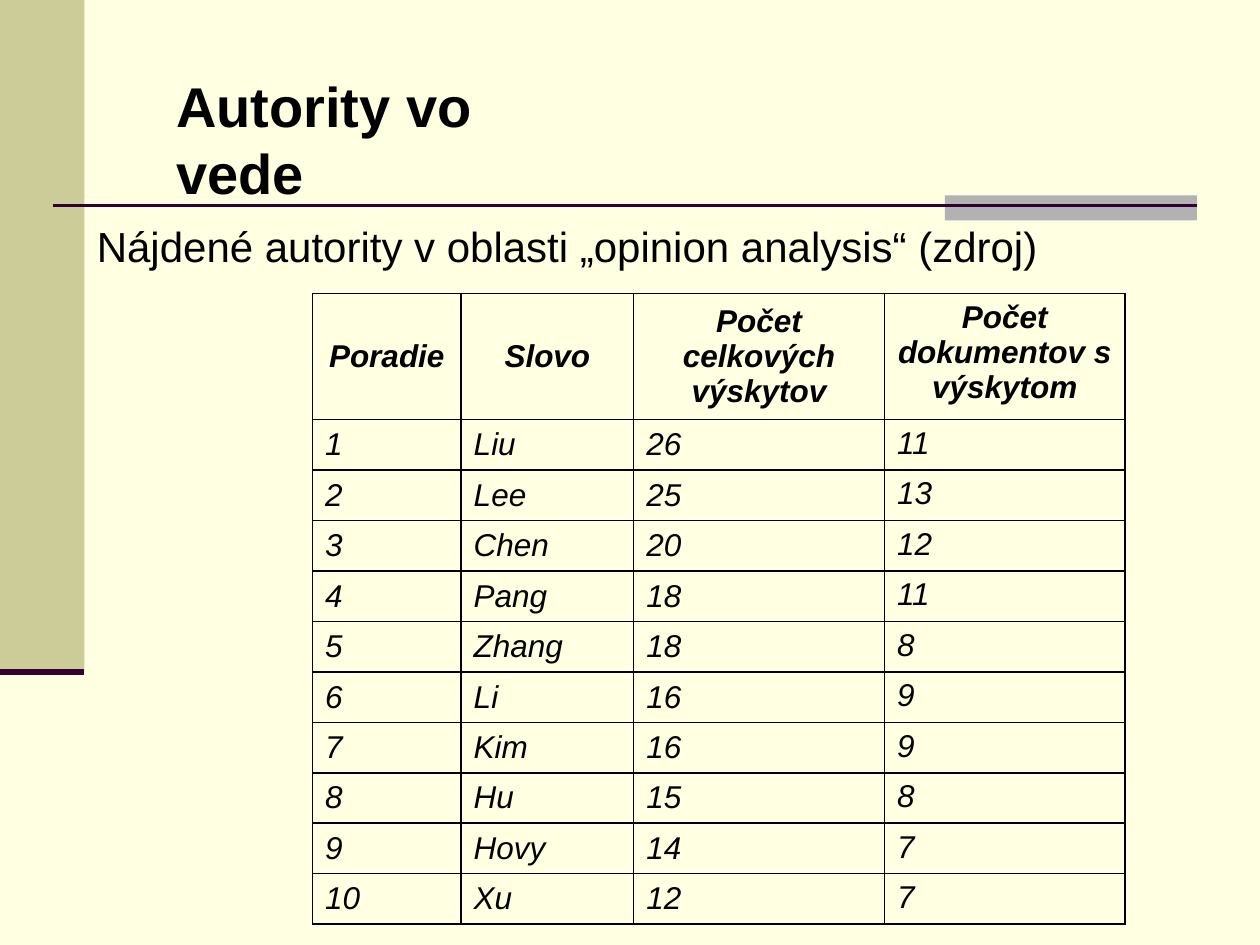
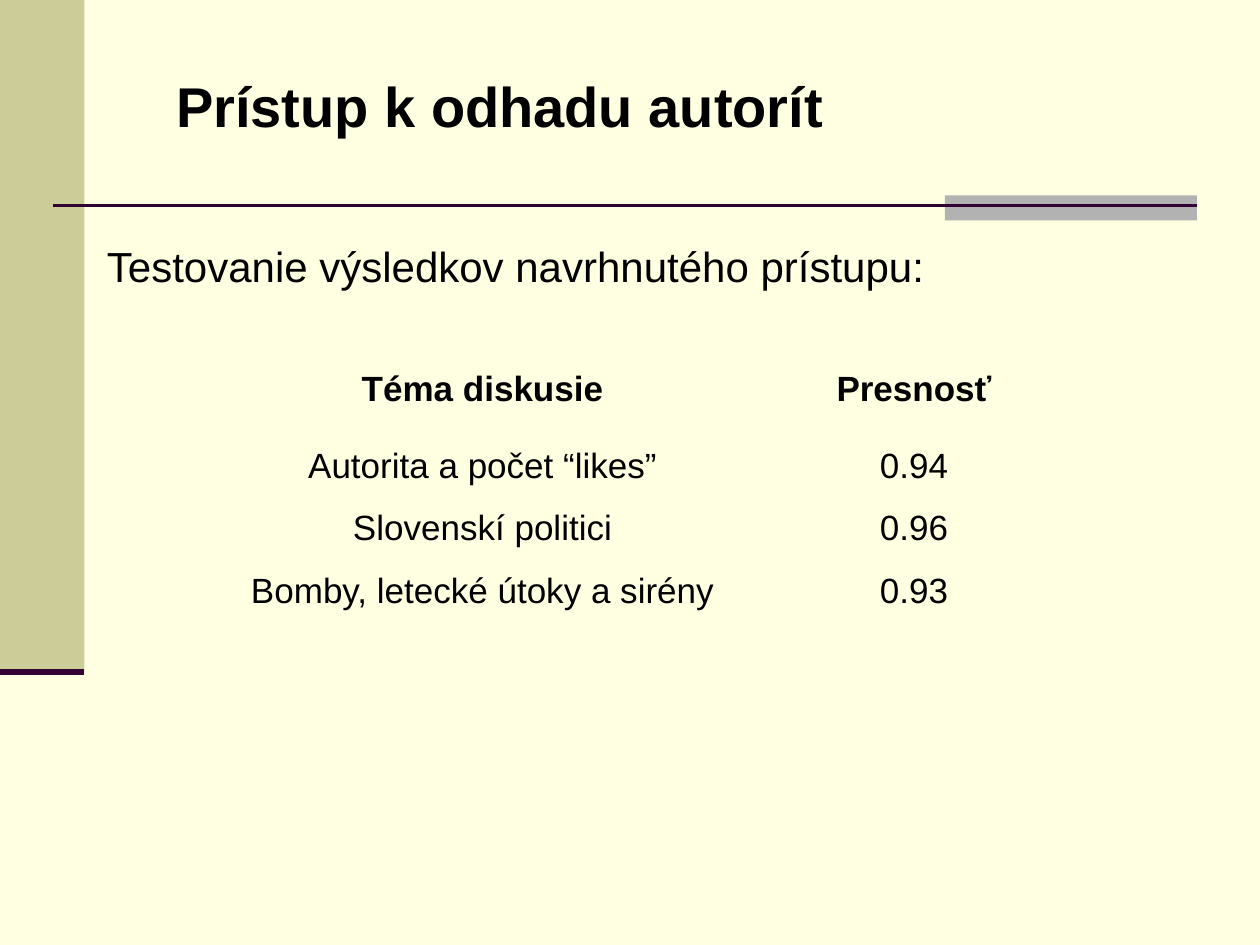
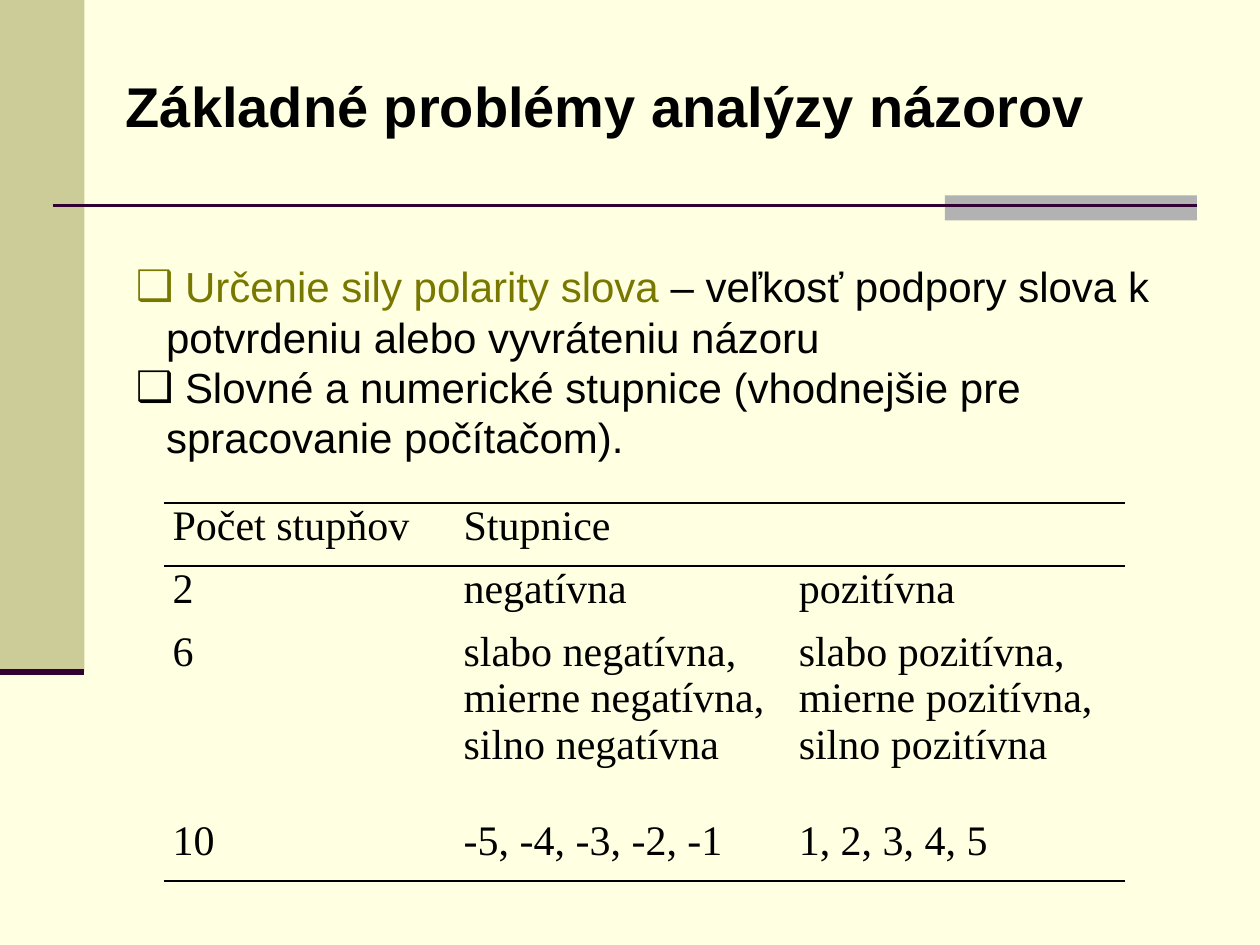
from dataclasses import dataclass

from lxml import etree
from pptx import Presentation
from pptx import util as u
from pptx.dml.color import RGBColor
from pptx.enum import shapes, text
from pptx.oxml import ns


@dataclass(frozen=True)
class Theme:
    background: str = "FFFFE1"
    band: str = "CCCC99"
    accent: str = "B2B2B2"
    rule: str = "330033"
    ink: str = "000000"
    olive: str = "787800"
    sans: str = "Arial"
    serif: str = "Times New Roman"
    title_size: int = 32
    body_size: int = 24


theme = Theme()
LEFT, CENTER, JUSTIFY = text.PP_ALIGN.LEFT, text.PP_ALIGN.CENTER, text.PP_ALIGN.JUSTIFY
TOP, MIDDLE = text.MSO_ANCHOR.TOP, text.MSO_ANCHOR.MIDDLE


def add_run(paragraph, words, color=theme.ink, **formats):
    run = paragraph.add_run()
    run.text = words
    run.font.color.rgb = RGBColor.from_string(color)
    for name, value in ({"name": theme.sans, "size": u.Pt(theme.body_size)} | formats).items():
        setattr(run.font, name, value)


def add_text_box(slide, box, paragraphs, **formats):
    """Write a text box; each paragraph is a list of (words, colour) runs."""
    frame = slide.shapes.add_textbox(*map(u.Inches, box)).text_frame
    frame.word_wrap = True
    for index, runs in enumerate(paragraphs):
        paragraph = frame.add_paragraph() if index else frame.paragraphs[0]
        for words, color in runs:
            add_run(paragraph, words, color, **formats)
    return frame


authorities = [
    ("Poradie", "Slovo", "Počet celkových výskytov", "Počet dokumentov s výskytom"),
    ("1", "Liu", "26", "11"),
    ("2", "Lee", "25", "13"),
    ("3", "Chen", "20", "12"),
    ("4", "Pang", "18", "11"),
    ("5", "Zhang", "18", "8"),
    ("6", "Li", "16", "9"),
    ("7", "Kim", "16", "9"),
    ("8", "Hu", "15", "8"),
    ("9", "Hovy", "14", "7"),
    ("10", "Xu", "12", "7"),
]
precision = [
    ("Téma diskusie", "Presnosť"),
    ("Autorita a počet “likes”", "0.94"),
    ("Slovenskí politici", "0.96"),
    ("Bomby, letecké útoky a sirény", "0.93"),
]
scales = [
    ("Počet stupňov", "Stupnice", ""),
    ("2", "negatívna", "pozitívna"),
    ("6", "slabo negatívna, mierne negatívna, silno negatívna",
     "slabo pozitívna, mierne pozitívna, silno pozitívna"),
    ("10", "-5, -4, -3, -2, -1", "1, 2, 3, 4, 5"),
]

# row_lines holds the width of each horizontal rule, side_line that of the vertical ones
pages = [
    dict(
        title="Autority vo vede", title_box=(1.3, 0.52, 3.68, 0.63),
        body_box=(0.67, 1.7, 8.66, 0.51), bulleted=False,
        body=[[("Nájdené autority v oblasti „opinion analysis“ (zdroj)", theme.ink)]],
        rows=authorities, at=(2.48, 2.33), widths=(1.18, 1.37, 1.99, 1.91),
        heights=[1] + [0.4] * 10, row_lines=[1] * 12, side_line=1,
        font={"size": u.Pt(18), "italic": True}, bold_header=True,
        header_align=CENTER, align=JUSTIFY, anchors=(MIDDLE, MIDDLE, MIDDLE, TOP),
        margins=(0.1, 0.05), merge_header=False,
    ),
    dict(
        title="Prístup k odhadu autorít", title_box=(1.3, 0.52, 5.38, 0.64),
        body_box=(0.75, 1.86, 8.98, 0.5), bulleted=False,
        body=[[("Testovanie výsledkov navrhnutého prístupu:", theme.ink)]],
        rows=precision, at=(1.3, 2.73), widths=(5.06, 1.79),
        heights=[0.72, 0.5, 0.49, 0.5], row_lines=[0] * 5, side_line=0,
        font={"size": u.Pt(20)}, bold_header=True,
        header_align=CENTER, align=CENTER, anchors=(MIDDLE, MIDDLE),
        margins=(0.1, 0.05), merge_header=False,
    ),
    dict(
        title="Základné problémy analýzy názorov", title_box=(0.9, 0.52, 7.87, 1.18),
        body_box=(0.98, 2.02, 8.74, 1.72), bulleted=True,
        body=[
            [(" Určenie sily polarity slova ", theme.olive),
             ("– veľkosť podpory slova k potvrdeniu alebo vyvráteniu názoru", theme.ink)],
            [(" Slovné a numerické stupnice (vhodnejšie pre spracovanie počítačom).", theme.ink)],
        ],
        rows=scales, at=(1.3, 3.99), widths=(2.31, 2.66, 2.66),
        heights=[0.5, 0.5, 1.5, 0.5], row_lines=[1.5, 1, 0, 0, 1.5], side_line=0,
        font={"name": theme.serif}, bold_header=False,
        header_align=LEFT, align=LEFT, anchors=(TOP, TOP, TOP),
        margins=(0.07, 0), merge_header=True,
    ),
]

presentation = Presentation()
presentation.slide_width, presentation.slide_height = u.Inches(10), u.Inches(7.5)
layout = presentation.slide_layouts[6]
layout.background.fill.solid()
layout.background.fill.fore_color.rgb = RGBColor.from_string(theme.background)
for placeholder in list(layout.placeholders):
    layout.shapes.element.remove(placeholder.element)
slides = [presentation.slides.add_slide(layout) for page in pages]

# Shared bands and rules are drawn once and moved to the layout
for box, color in [((0, 0, 0.67, 5.33), theme.band), ((7.5, 1.55, 2, 0.2), theme.accent)]:
    band = slides[0].shapes.add_shape(shapes.MSO_SHAPE.RECTANGLE, *map(u.Inches, box))
    band.shadow.inherit = False
    band.fill.solid()
    band.fill.fore_color.rgb = RGBColor.from_string(color)
    band.line.fill.background()
    layout.shapes.element.append(band.element)
for ends, width in [((0.42, 1.63, 9.5, 1.63), 1.5), ((0, 5.33, 0.67, 5.33), 3.5)]:
    rule = slides[0].shapes.add_connector(shapes.MSO_CONNECTOR.STRAIGHT, *map(u.Inches, ends))
    rule.line.color.rgb = RGBColor.from_string(theme.rule)
    rule.line.width = u.Pt(width)
    etree.SubElement(rule.element.spPr, ns.qn("a:effectLst"))
    layout.shapes.element.append(rule.element)

for slide, page in zip(slides, pages):
    add_text_box(slide, page["title_box"], [[(page["title"], theme.ink)]],
                 size=u.Pt(theme.title_size), bold=True)
    body = add_text_box(slide, page["body_box"], page["body"])
    if page["bulleted"]:
        for paragraph, runs in zip(body.paragraphs, page["body"]):
            properties = paragraph._p.get_or_add_pPr()
            properties.set("marL", str(u.Inches(0.24)))
            properties.set("indent", str(-u.Inches(0.24)))
            bullet_color = etree.SubElement(properties, ns.qn("a:buClr"))
            etree.SubElement(bullet_color, ns.qn("a:srgbClr"), val=runs[0][1])
            etree.SubElement(properties, ns.qn("a:buFont"), typeface=theme.sans)
            etree.SubElement(properties, ns.qn("a:buChar"), char="❑")

    rows, widths, heights = page["rows"], page["widths"], page["heights"]
    size = (sum(widths), sum(heights))
    table = slide.shapes.add_table(len(rows), len(widths),
                                   *map(u.Inches, page["at"] + size)).table
    table.first_row = table.horz_banding = False
    for column, width in zip(table.columns, widths):
        column.width = u.Inches(width)
    for row, height in zip(table.rows, heights):
        row.height = u.Inches(height)

    side_margin, edge_margin = map(u.Inches, page["margins"])
    for row_index, values in enumerate(rows):
        is_header = row_index == 0
        top_line, bottom_line = page["row_lines"][row_index:row_index + 2]
        borders = {"lnL": page["side_line"], "lnR": page["side_line"],
                   "lnT": top_line, "lnB": bottom_line}
        for column_index, value in enumerate(values):
            cell = table.cell(row_index, column_index)
            formats = {
                "margin_left": side_margin, "margin_right": side_margin,
                "margin_top": edge_margin, "margin_bottom": edge_margin,
                "vertical_anchor": page["anchors"][column_index],
            }
            for name, setting in formats.items():
                setattr(cell, name, setting)
            paragraph = cell.text_frame.paragraphs[0]
            paragraph.alignment = page["header_align"] if is_header else page["align"]
            if value:
                add_run(paragraph, value, bold=is_header and page["bold_header"], **page["font"])
            for side, width in borders.items():
                border = etree.SubElement(cell._tc.get_or_add_tcPr(), ns.qn(f"a:{side}"),
                                          w=str(u.Pt(width)))
                if width:
                    fill = etree.SubElement(border, ns.qn("a:solidFill"))
                    etree.SubElement(fill, ns.qn("a:srgbClr"), val=theme.ink)
                else:
                    etree.SubElement(border, ns.qn("a:noFill"))
            cell.fill.background()
    if page["merge_header"]:
        table.cell(0, 1).merge(table.cell(0, len(widths) - 1))

presentation.save("out.pptx")
